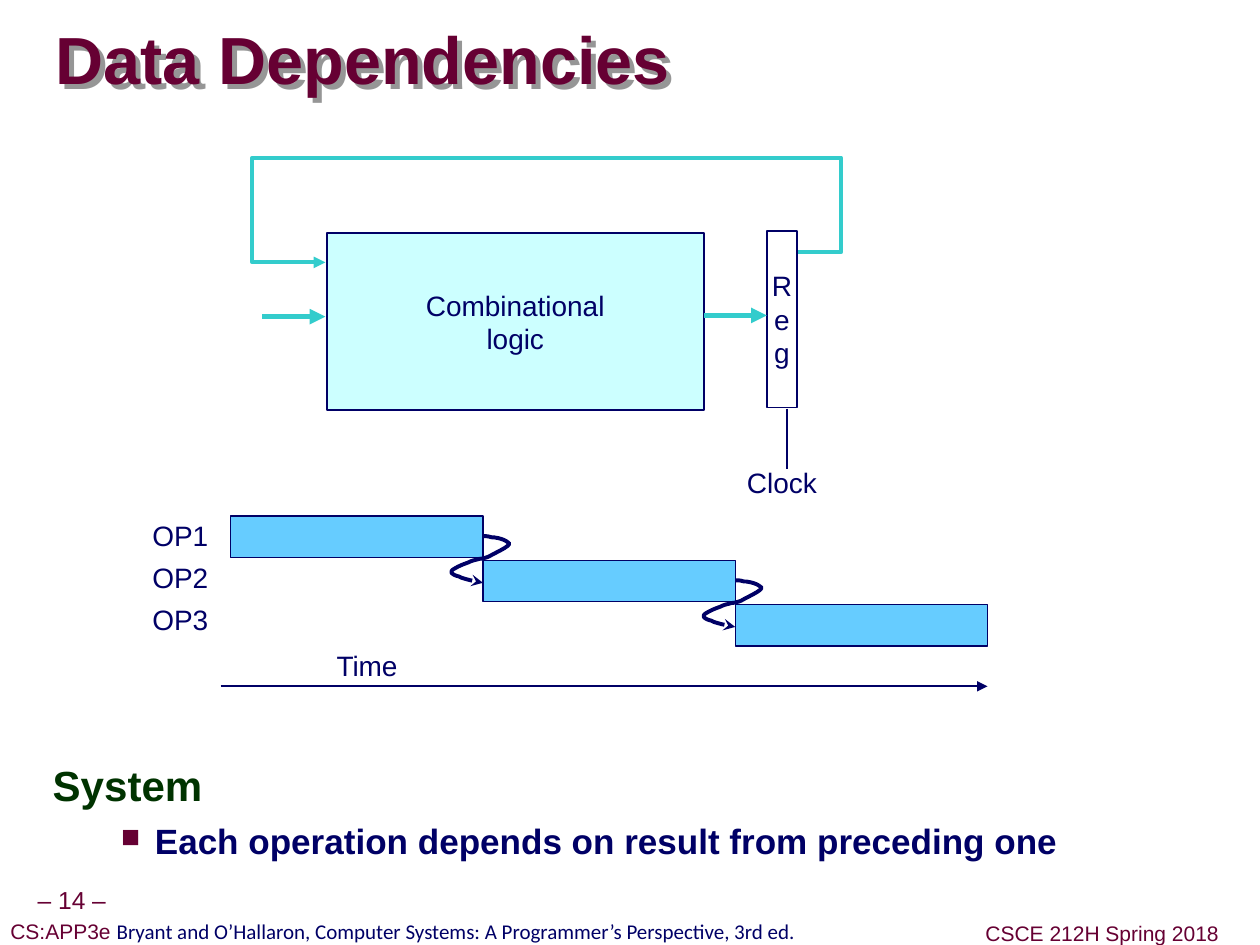
from lxml import etree
from pptx import Presentation
from pptx.dml.color import RGBColor
from pptx.enum.shapes import MSO_CONNECTOR, MSO_SHAPE
from pptx.enum.text import MSO_ANCHOR, PP_ALIGN
from pptx.oxml.ns import qn
from pptx.util import Inches, Pt

COLORS = {"maroon": "660033", "navy": "000066", "green": "003300", "teal": "33CCCC",
          "pale": "CCFFFF", "sky": "66CCFF", "white": "FFFFFF", "shadow": "969696"}
RECT, STRAIGHT = MSO_SHAPE.RECTANGLE, MSO_CONNECTOR.STRAIGHT
LEFT, CENTER, RIGHT = PP_ALIGN.LEFT, PP_ALIGN.CENTER, PP_ALIGN.RIGHT
TOP, MIDDLE = MSO_ANCHOR.TOP, MSO_ANCHOR.MIDDLE

# Cubic segments from one bar to the next, relative to the point where they start
DEPENDENCY_START = (0, 0)
DEPENDENCY_CURVES = [
    ((0.07, 0), (0.04, 0.01), (0.09, 0.01)),
    ((0.16, 0.02), (0.19, 0.04), (0.21, 0.06)),
    ((0.2, 0.09), (0.08, 0.14), (0.05, 0.16)),
    ((0.03, 0.17), (-0.01, 0.18), (-0.03, 0.18)),
    ((-0.06, 0.19), (-0.08, 0.19), (-0.12, 0.21)),
    ((-0.15, 0.22), (-0.2, 0.24), (-0.23, 0.26)),
    ((-0.25, 0.27), (-0.25, 0.28), (-0.25, 0.29)),
    ((-0.24, 0.3), (-0.23, 0.31), (-0.19, 0.32)),
    ((-0.16, 0.34), (-0.05, 0.36), (0, 0.37)),
]


def rgb(name):
    return RGBColor.from_string(COLORS[name])


def style_font(font, size, color, bold=False, face="Arial"):
    font.name, font.size, font.bold = face, Pt(size), bold
    font.color.rgb = rgb(color)


def write(shape, lines, size, color="navy", align=CENTER, anchor=MIDDLE,
          insets=(0.1, 0.05), wrap=False, bold=False, spacing=None):
    """Fill a shape with one paragraph per line."""
    frame = shape.text_frame
    frame.word_wrap, frame.vertical_anchor = wrap, anchor
    frame.margin_left = frame.margin_right = Inches(insets[0])
    frame.margin_top = frame.margin_bottom = Inches(insets[1])
    frame.text = "\n".join(lines)
    for paragraph in frame.paragraphs:
        paragraph.alignment, paragraph.line_spacing = align, spacing
        style_font(paragraph.font, size, color, bold)


def add_text(slide, box, lines, size, **options):
    shape = slide.shapes.add_textbox(*map(Inches, box))
    write(shape, lines, size, **options)
    return shape


def add_rect(slide, box, fill, width=None):
    shape = slide.shapes.add_shape(RECT, *map(Inches, box))
    shape.shadow.inherit = False
    shape.fill.solid()
    shape.fill.fore_color.rgb = rgb(fill)
    if width:
        shape.line.color.rgb, shape.line.width = rgb("navy"), Pt(width)
    else:
        shape.line.fill.background()
    return shape


def style_line(shape, color, width, head=None):
    shape.line.color.rgb, shape.line.width = rgb(color), Pt(width)
    properties = shape._element.spPr
    if head:
        etree.SubElement(properties.find(qn("a:ln")), qn("a:tailEnd"), type=head)


def add_line(slide, start, end, color, width, head=None):
    line = slide.shapes.add_connector(STRAIGHT, *map(Inches, (*start, *end)))
    style_line(line, color, width, head)
    etree.SubElement(line._element.spPr, qn("a:effectLst"))


def add_path(slide, points, color, head):
    points = [(Inches(x), Inches(y)) for x, y in points]
    builder = slide.shapes.build_freeform(*points[0])
    builder.add_line_segments(points[1:], close=False)
    outline = builder.convert_to_shape()
    outline.shadow.inherit = False
    outline.fill.background()
    style_line(outline, color, 2.25, head)


def curve_points(start, curves, steps=6):
    """Sample a chain of cubic Bezier segments."""
    points = [start]
    for c1, c2, end in curves:
        origin = points[-1]
        for step in range(1, steps + 1):
            t = step / steps
            u = 1 - t
            points.append(tuple(
                u**3 * a + 3 * u * u * t * b + 3 * u * t * t * c + t**3 * d
                for a, b, c, d in zip(origin, c1, c2, end)))
    return points


def add_title(slide, box):
    title = add_text(slide, box, ["Data Dependencies"], 38, color="maroon", align=LEFT,
                     insets=(0, 0), wrap=True, bold=True, spacing=0.87)
    effects = etree.SubElement(title._element.spPr, qn("a:effectLst"))
    shadow = etree.SubElement(effects, qn("a:outerShdw"), dist=str(Inches(0.06)),
                              dir="2700000", algn="ctr", rotWithShape="0")
    etree.SubElement(shadow, qn("a:srgbClr"), val=COLORS["shadow"])


def add_circuit(slide, left, top):
    """Combinational logic feeding a register, with the feedback loop around both."""
    logic_left, reg_left, reg_top = left + 0.59, left + 4.08, top + 0.58
    flow_y = top + 1.25
    clock_x, clock_top = reg_left + 0.16, reg_top + 1.41

    add_line(slide, (left + 0.08, flow_y + 0.01), (logic_left - 0.01, flow_y + 0.01),
             "teal", 3, "triangle")
    add_text(slide, (clock_x - 0.54, clock_top + 0.4, 1, 0.36), ["Clock"], 16, anchor=TOP)
    logic = add_rect(slide, (logic_left, reg_top + 0.02, 2.99, 1.4), "pale", 1)
    write(logic, ["Combinational", "logic"], 16)
    register = add_rect(slide, (reg_left, reg_top, 0.24, 1.4), "white", 1)
    write(register, "Reg", 16)
    add_line(slide, (logic_left + 2.99, flow_y), (reg_left, flow_y), "teal", 3, "triangle")
    add_line(slide, (clock_x, clock_top), (clock_x, clock_top + 0.48), "navy", 1)

    right, out_y, in_y = left + 4.67, top + 0.75, top + 0.83
    add_path(slide, [(reg_left + 0.25, out_y), (right, out_y), (right, top), (left, top),
                     (left, in_y), (logic_left - 0.01, in_y)], "teal", "triangle")


def add_timeline(slide, left, top):
    """Three operations in sequence, each starting when the one before it ends."""
    bar_left, bar_width, bar_step = left + 1, 2, 0.35
    axis_y = top + 1.36
    add_line(slide, (left + 0.92, axis_y), (left + 7, axis_y), "navy", 1, "triangle")
    add_text(slide, (left + 1.74, top + 1.01, 0.8, 0.36), ["Time"], 16,
             align=LEFT, anchor=TOP)
    for index, operation in enumerate(("OP1", "OP2", "OP3")):
        label = add_rect(slide, (left, top + index / 3, 0.92, 0.33), "white")
        write(label, [operation], 16, align=RIGHT)
        x, y = bar_left + index * bar_width, top + 0.01 + index * bar_step
        add_rect(slide, (x, y, bar_width, 0.33), "sky", 0.75)
    for index in (1, 2):
        x, y = bar_left + index * bar_width, top - 0.18 + index * bar_step
        points = curve_points(DEPENDENCY_START, DEPENDENCY_CURVES)
        add_path(slide, [(x + dx, y + dy) for dx, dy in points], "navy", "stealth")


def add_body(slide, box):
    body = add_text(slide, box,
                    ["System", "Each operation depends on result from preceding one"],
                    24, color="green", align=LEFT, anchor=TOP, wrap=True, bold=True)
    heading, point = body.text_frame.paragraphs
    heading.line_spacing = 0.95
    style_font(point.font, 20, "navy", bold=True)
    point.space_before = Pt(5)
    properties = point._p.get_or_add_pPr()
    properties.set("marL", str(Inches(0.81)))
    properties.set("indent", str(Inches(-0.27)))
    bullet_color = etree.Element(qn("a:buClr"))
    etree.SubElement(bullet_color, qn("a:srgbClr"), val=COLORS["maroon"])
    bullet_size = etree.Element(qn("a:buSzPct"), val="75000")
    bullet = etree.Element(qn("a:buChar"), char="■")
    defaults = properties.find(qn("a:defRPr"))
    for part in (bullet_color, bullet_size, bullet):
        defaults.addprevious(part)


def add_footer(slide, left, top):
    style = {"color": "maroon", "insets": (0.05, 0.05), "spacing": 0.9}
    add_text(slide, (left + 0.24, top, 0.66, 0.31), ["– 14 –"], 14, **style)
    source = add_text(slide, (left, top + 0.26, 6.39, 0.28), ["CS:APP3e "], 12, **style)
    citation = source.text_frame.paragraphs[0].add_run()
    citation.text = ("Bryant and O’Hallaron, Computer Systems: "
                     "A Programmer’s Perspective, 3rd ed.")
    style_font(citation.font, 12, "navy", face="Calibri")
    add_text(slide, (left + 7.76, top + 0.28, 1.96, 0.28), ["CSCE 212H Spring 2018"],
             12, **style)


def main():
    deck = Presentation()
    deck.slide_width, deck.slide_height = Inches(9.99), Inches(7.49)
    slide = deck.slides.add_slide(deck.slide_layouts[6])
    add_footer(slide, 0, 6.99)
    add_title(slide, (0.44, 0.08, 9.52, 0.85))
    add_body(slide, (0.32, 6, 9.07, 1.03))
    add_circuit(slide, 2, 1.25)
    add_timeline(slide, 0.83, 4.08)
    deck.save("out.pptx")


if __name__ == "__main__":
    main()
